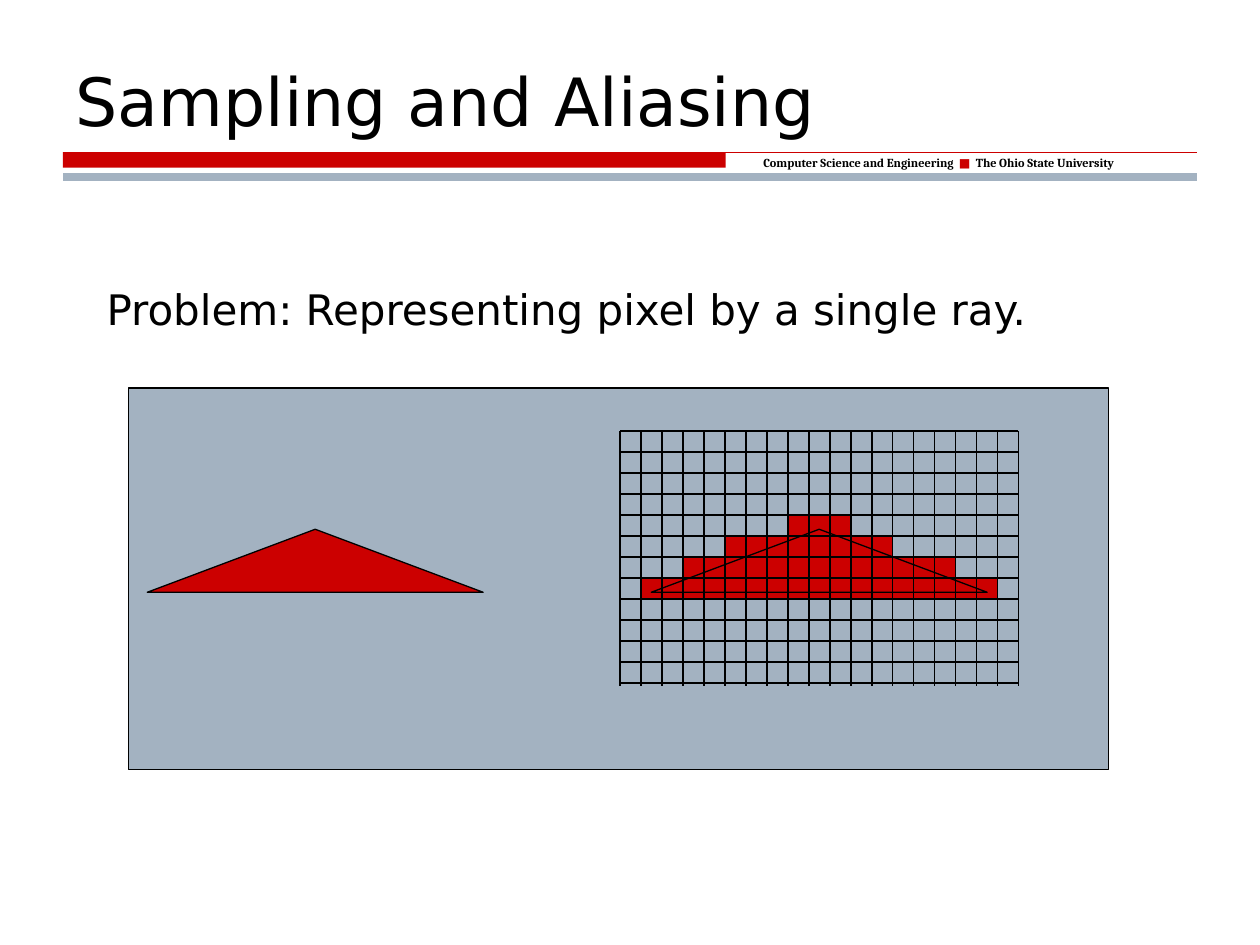
from pptx import Presentation
from pptx.dml.color import RGBColor
from pptx.enum.shapes import MSO_CONNECTOR, MSO_SHAPE
from pptx.enum.text import MSO_ANCHOR, PP_ALIGN
from pptx.oxml.ns import qn
from pptx.util import Cm, Pt
from lxml.etree import SubElement

RED, GRAY, BLACK = "CC0000", "A3B2C1", "000000"
rgb = RGBColor.from_string

prs = Presentation()
prs.slide_width, prs.slide_height = Cm(25.4), Cm(19.05)
s = prs.slides.add_slide(prs.slide_layouts[5])


def add_shape(kind, x, y, w, h, fill=None, line=BLACK):
    sp = s.shapes.add_shape(kind, Cm(x), Cm(y), Cm(w), Cm(h))
    sp.shadow.inherit = False
    if fill:
        sp.fill.solid()
        sp.fill.fore_color.rgb = rgb(fill)
    else:
        sp.fill.background()
    if line:
        sp.line.color.rgb = rgb(line)
        sp.line.width = Pt(0.75)
    else:
        sp.line.fill.background()
    return sp


def add_line(x1, y1, x2, y2, color=BLACK, width=1):
    c = s.shapes.add_connector(MSO_CONNECTOR.STRAIGHT, Cm(x1), Cm(y1), Cm(x2), Cm(y2))
    c.line.color.rgb = rgb(color)
    c.line.width = Pt(width)
    SubElement(c._element.spPr, qn("a:effectLst"))


# Header band and rules
add_shape(MSO_SHAPE.RECTANGLE, 1.27, 3.07, 13.36, 0.31, RED, None)
add_line(1.27, 3.07, 24.13, 3.07, RED, 0.75)
add_line(1.27, 3.56, 24.13, 3.56, GRAY, 4.5)

# Title
title = s.shapes.title
title.left, title.top, title.width, title.height = Cm(1.27), Cm(0.64), Cm(22.86), Cm(2.31)
title.text_frame.vertical_anchor = MSO_ANCHOR.BOTTOM

# Department label and problem statement
label = s.shapes.add_textbox(Cm(15.14), Cm(3), Cm(8.66), Cm(0.56))
label.text_frame.word_wrap = False
body = s.shapes.add_textbox(Cm(1.9), Cm(5.59), Cm(21.6), Cm(1.27))
body.text_frame.word_wrap = True

texts = [
    (title, [("Sampling and Aliasing", 38, "DejaVu Sans", BLACK, False)]),
    (label, [("Computer Science and Engineering  ", 7, "Cambria", BLACK, True),
             ("■", 7, "DejaVu Sans", RED, False),
             ("  The Ohio State University", 7, "Cambria", BLACK, True)]),
    (body, [("Problem: Representing pixel by a single ray.", 24, "DejaVu Sans", BLACK, False)]),
]
for sp, runs in texts:
    p = sp.text_frame.paragraphs[0]
    p.alignment = PP_ALIGN.LEFT
    for text, size, font, color, bold in runs:
        r = p.add_run()
        r.text = text
        r.font.size, r.font.name, r.font.bold = Pt(size), font, bold
        r.font.color.rgb = rgb(color)

# Panel
add_shape(MSO_SHAPE.RECTANGLE, 2.59, 7.82, 19.76, 7.7, GRAY)

# Pixel grid: 19 columns by 12 rows
cols, rows = 19, 12
left, top, right, bottom = 12.5, 8.69, 20.53, 13.77
dx, dy = (right - left) / cols, (bottom - top) / rows

# Sampled pixels: first column and column count for each row
for row, (col, count) in enumerate([(8, 3), (5, 8), (3, 13), (1, 17)], start=4):
    add_shape(MSO_SHAPE.RECTANGLE, left + col * dx, top + row * dy, count * dx, dy, RED)

# Grid lines
for i in range(cols + 1):
    add_line(left + i * dx, top, left + i * dx, bottom + 0.05)
for i in range(rows + 1):
    add_line(left, top + i * dy, right, top + i * dy)

# True triangle over the grid, and on its own
for x, fill in [(13.13, None), (2.97, RED)]:
    add_shape(MSO_SHAPE.ISOSCELES_TRIANGLE, x, 10.67, 6.77, 1.27, fill)

prs.save("out.pptx")
